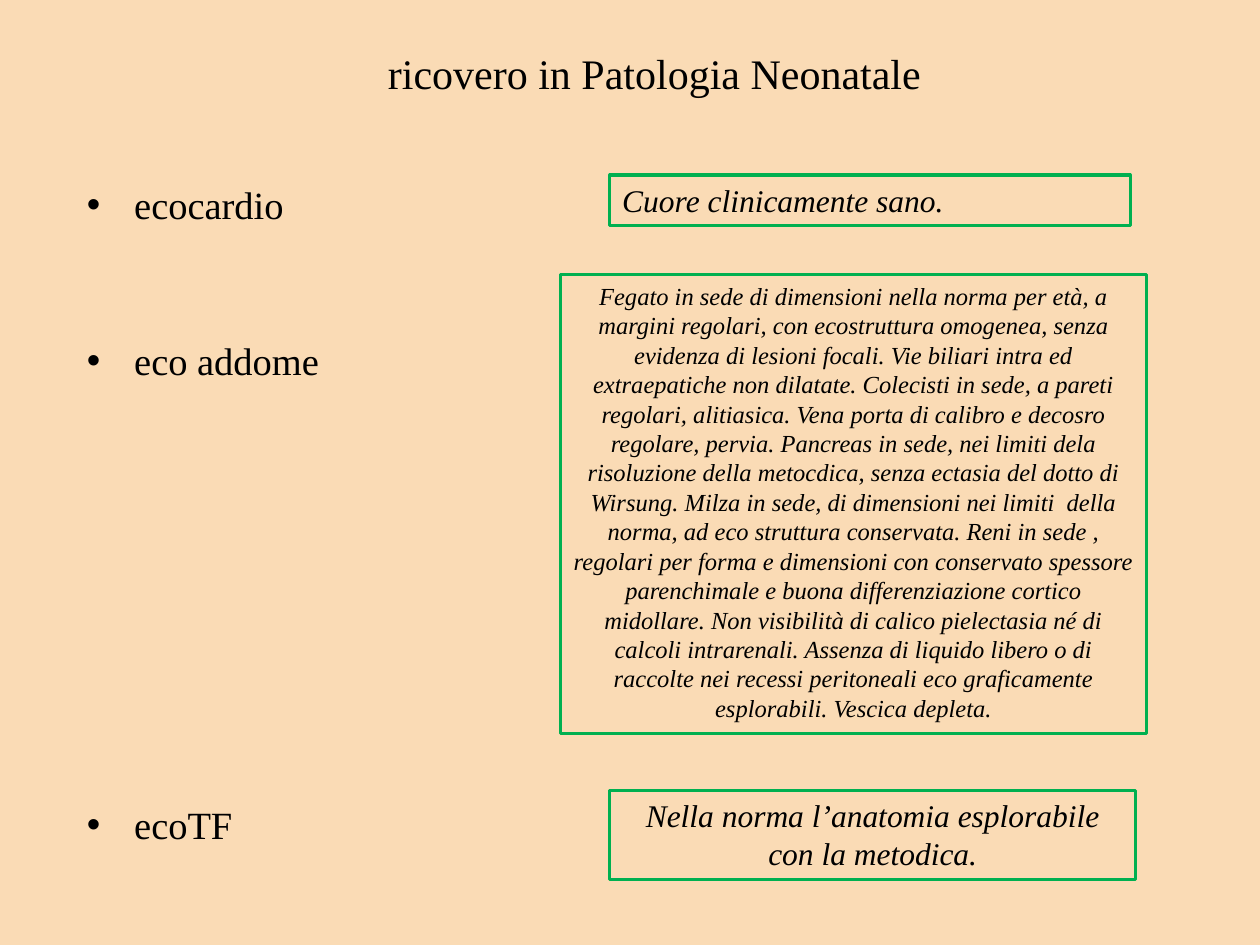
from pptx import Presentation
from pptx.dml.color import RGBColor
from pptx.enum.text import MSO_ANCHOR, MSO_AUTO_SIZE, PP_ALIGN
from pptx.util import Pt

TOP = MSO_ANCHOR.TOP
FIXED = MSO_AUTO_SIZE.NONE
LEFT = PP_ALIGN.LEFT
CENTER = PP_ALIGN.CENTER

PEACH = RGBColor(0xFA, 0xDB, 0xB5)
GREEN = RGBColor(0x00, 0xB0, 0x50)
BLACK = RGBColor(0x00, 0x00, 0x00)

TITLE = "ricovero in Patologia Neonatale"
EXAMS = [("ecocardio", 0), ("eco addome", 62.7), ("ecoTF", 238.7)]
HEART = "Cuore clinicamente sano."
ABDOMEN = (
    "Fegato in sede di dimensioni nella norma per età, a margini regolari, "
    "con ecostruttura omogenea, senza evidenza di lesioni focali. Vie biliari "
    "intra ed extraepatiche non dilatate. Colecisti in sede, a pareti regolari, "
    "alitiasica. Vena porta di calibro e decosro regolare, pervia. Pancreas in "
    "sede, nei limiti dela risoluzione della metocdica, senza ectasia del dotto "
    "di Wirsung. Milza in sede, di dimensioni nei limiti  della norma, ad eco "
    "struttura conservata. Reni in sede , regolari per forma e dimensioni con "
    "conservato spessore parenchimale e buona differenziazione cortico midollare. "
    "Non visibilità di calico pielectasia né di calcoli intrarenali. Assenza di "
    "liquido libero o di raccolte nei recessi peritoneali eco graficamente "
    "esplorabili. Vescica depleta."
)
HEAD = "Nella norma l’anatomia esplorabile con la metodica."


class ReportPage:
    font = "Times New Roman"
    line_width = Pt(1.75)

    def __init__(self, deck):
        self.page = deck.slides.add_slide(deck.slide_layouts[1])
        fill = self.page.background.fill
        fill.solid()
        fill.fore_color.rgb = PEACH

    def place(self, shape, left, top, width, height):
        shape.left, shape.top = Pt(left), Pt(top)
        shape.width, shape.height = Pt(width), Pt(height)
        frame = shape.text_frame
        frame.word_wrap = True
        frame.auto_size = FIXED
        frame.vertical_anchor = TOP

    def style(self, paragraph, size, align, before=0, italic=False):
        paragraph.alignment = align
        paragraph.line_spacing = 1.0
        paragraph.space_before = Pt(before)
        for span in paragraph.runs:
            span.font.name = self.font
            span.font.size = Pt(size)
            span.font.italic = italic
            span.font.color.rgb = BLACK

    def title(self, text, *area):
        shape = self.page.shapes.title
        self.place(shape, *area)
        shape.text_frame.text = text
        self.style(shape.text_frame.paragraphs[0], 24, CENTER)

    def bullets(self, items, *area):
        shape = self.page.placeholders[1]
        self.place(shape, *area)
        frame = shape.text_frame
        frame.text = "\n".join(text for text, _ in items)
        for paragraph, (_, before) in zip(frame.paragraphs, items):
            self.style(paragraph, 22, LEFT, before)

    def finding(self, text, size, align, *area):
        box = self.page.shapes.add_textbox(0, 0, 0, 0)
        self.place(box, *area)
        box.line.color.rgb = GREEN
        box.line.width = self.line_width
        box.text_frame.text = text
        self.style(box.text_frame.paragraphs[0], size, align, italic=True)


def main():
    deck = Presentation()
    deck.slide_width, deck.slide_height = Pt(720), Pt(540)
    report = ReportPage(deck)
    report.title(TITLE, 42.5, 23.5, 663, 35)
    report.bullets(EXAMS, 42.5, 99.7, 663, 414)
    report.finding(HEART, 18, LEFT, 348.5, 100, 297.4, 29)
    report.finding(HEAD, 18, CENTER, 348.5, 451.5, 300.5, 51)
    report.finding(ABDOMEN, 14, CENTER, 320.4, 157, 334.8, 262)
    deck.save("out.pptx")


if __name__ == "__main__":
    main()
